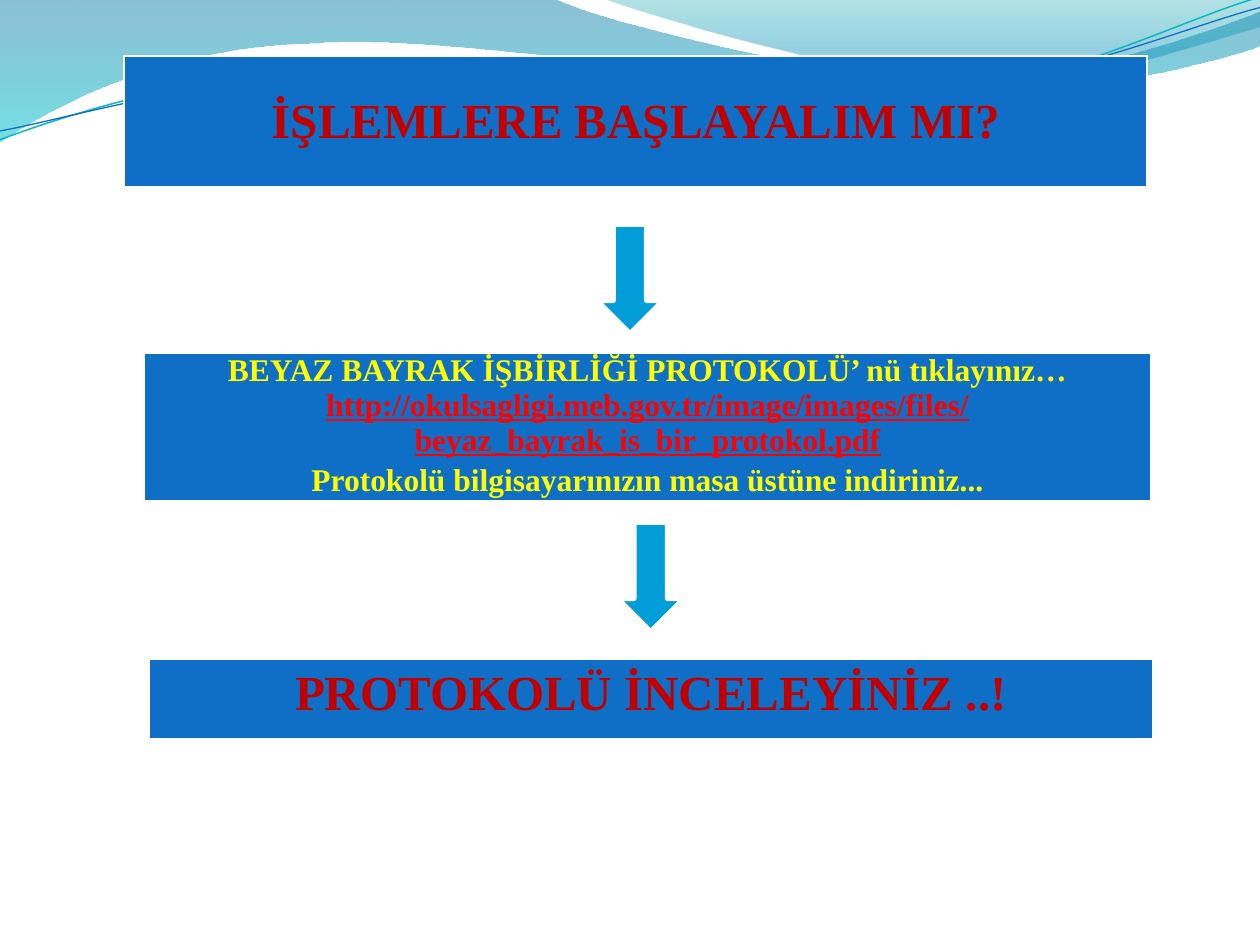
import pptx
import pptx.util
import pptx.dml.color
import pptx.enum.shapes
import pptx.enum.text
import pptx.oxml
import pptx.oxml.ns

COLORS = {
    "panel": "0F6FC6", "arrow": "009DD9", "white": "FFFFFF", "heading": "C00000",
    "note": "FFFF00", "address": "FF0000",
    "wave_top": "0074A1", "wave_bottom": "00C6CF",
    "crest_top": "00A1A9", "crest_bottom": "008BBF",
    "teal_line": "0AB8BF", "blue_line": "0F6FC6",
}
FONT = "Times New Roman"
COLUMNS, ROWS = 100, 75
CELL = pptx.util.Inches(0.1)
STRAND_TILT = 357.3


def grid(*lengths):
    return [round(length * CELL) for length in lengths]


def rgb(name):
    return pptx.dml.color.RGBColor.from_string(COLORS[name])


def xml(markup):
    return pptx.oxml.parse_xml(markup.replace(">", f" {pptx.oxml.ns.nsdecls('a')}>", 1))


def add_curve(shapes, start, pieces, closed):
    builder = shapes.build_freeform(*grid(*start), scale=1.0)
    builder.add_line_segments([grid(*piece[-2:]) for piece in pieces], close=closed)
    shape = builder.convert_to_shape()
    shape.shadow.inherit = False
    segments = list(shape._element.spPr.iter(pptx.oxml.ns.qn("a:lnTo")))
    for segment, piece in zip(segments, pieces):
        if len(piece) == 6:
            values = grid(*piece)
            points = "".join(
                f'<a:pt x="{x - shape.left}" y="{y - shape.top}"/>'
                for x, y in zip(values[::2], values[1::2]))
            bezier = xml(f"<a:cubicBezTo>{points}</a:cubicBezTo>")
            segment.getparent().replace(segment, bezier)
    return shape


def add_wave(page, start, pieces, stops):
    shape = add_curve(page.shapes, start, pieces, True)
    shape.line.fill.background()
    shape.fill.gradient()
    shape.fill.gradient_angle = 270
    for stop, (position, color, alpha) in zip(shape.fill.gradient_stops, stops):
        stop.position = position
        stop.color.rgb = rgb(color)
    colors = shape._element.spPr.iter(pptx.oxml.ns.qn("a:srgbClr"))
    for element, (position, color, alpha) in zip(colors, stops):
        element.append(xml(f'<a:alpha val="{alpha * 1000}"></a:alpha>'))


def add_strand(group, start, pieces, color, width):
    shape = add_curve(group.shapes, start, pieces, False)
    shape.rotation = STRAND_TILT
    shape.fill.background()
    shape.line.color.rgb = rgb(color)
    shape.line.width = pptx.util.Pt(width)


def add_header_waves(page):
    add_wave(page, (0, 0), [
        (44, -0.1), (47.6, 1.7, 66.4, 6.3, 75.8, 6.3), (85.3, 6.3, 95.8, 2.6, 100, 0.9),
        (100.1, 3.6), (98.3, 4.4, 87, 7.6, 74.6, 7.5), (62.2, 7.5, 38.2, 2.8, 25.7, 3.4),
        (12.9, 3.6, 4.6, 8.3, -0.1, 11.3), (0, 0),
    ], [(0, "wave_top", 45), (1, "wave_bottom", 55)])
    add_wave(page, (47.9, -0.1), [
        (50.9, 1.1, 68.2, 6.2, 76.9, 6.5), (85.6, 6.9, 96.1, 3.2, 100, 2.1),
        (100, 0), (47.9, -0.1),
    ], [(0, "crest_top", 30), (0.8, "crest_bottom", 45)])
    group = page.shapes.add_group_shape()
    add_strand(group, (-0.25, 8.75), [
        (4.6, 7.17, 15.8, 4.09, 27.7, 4.15), (39.6, 4.21, 59.2, 9.34, 71.2, 9.01),
        (83.2, 8.68, 94, 3.57, 100.1, 2.16),
    ], "teal_line", 0.85)
    add_strand(group, (-0.2, 8.04), [
        (4.5, 7.46, 16.4, 4.51, 28.3, 4.58), (40.3, 4.64, 59.6, 8.86, 71.6, 8.52),
        (83.6, 8.29, 94.3, 4.18, 100.2, 2.96),
    ], "blue_line", 0.75)


def add_panel(page, box, size, lines, anchor, bottom=0):
    table = page.shapes.add_table(1, 1, *grid(*box)).table
    table.first_row = table.horz_banding = False
    cell = table.cell(0, 0)
    cell.fill.solid()
    cell.fill.fore_color.rgb = rgb("panel")
    cell.vertical_anchor = anchor
    cell.margin_left = cell.margin_right = pptx.util.Inches(0.07)
    cell.margin_top = 0
    cell.margin_bottom = round(bottom * CELL)
    properties = cell._tc.get_or_add_tcPr()
    for index, (side, width) in enumerate(zip("LRTB", (1, 1, 1, 3))):
        properties.insert(index, xml(
            f'<a:ln{side} w="{pptx.util.Pt(width)}"><a:solidFill>'
            f'<a:srgbClr val="{COLORS["white"]}"/></a:solidFill></a:ln{side}>'))
    frame = cell.text_frame
    for index, (text, color, spacing, underline) in enumerate(lines):
        para = frame.add_paragraph() if index else frame.paragraphs[0]
        para.alignment = pptx.enum.text.PP_ALIGN.CENTER
        para.line_spacing = spacing
        span = para.add_run()
        span.text = text
        span.font.name = FONT
        span.font.size = pptx.util.Pt(size)
        span.font.bold = True
        span.font.underline = underline
        span.font.color.rgb = rgb(color)


def add_down_arrow(page, box):
    arrow = page.shapes.add_shape(pptx.enum.shapes.MSO_SHAPE.DOWN_ARROW, *grid(*box))
    arrow.fill.solid()
    arrow.fill.fore_color.rgb = rgb("arrow")
    arrow.line.color.rgb = rgb("white")
    arrow.line.width = pptx.util.Pt(3)
    arrow.shadow.inherit = False


def main():
    deck = pptx.Presentation()
    deck.slide_width, deck.slide_height = grid(COLUMNS, ROWS)
    page = deck.slides.add_slide(deck.slide_layouts[6])
    top = pptx.enum.text.MSO_ANCHOR.TOP
    middle = pptx.enum.text.MSO_ANCHOR.MIDDLE
    add_header_waves(page)
    add_panel(page, (9.85, 4.45, 81.2, 10.5), 28,
              [("İŞLEMLERE BAŞLAYALIM MI?", "heading", 1.15, False)], middle, 0.7)
    add_down_arrow(page, (47.35, 17.8, 5.3, 8.7))
    add_panel(page, (11.45, 28.05, 79.9, 11.8), 18, [
        ("BEYAZ BAYRAK İŞBİRLİĞİ PROTOKOLÜ’ nü tıklayınız…", "note", 1.0, False),
        ("http://okulsagligi.meb.gov.tr/image/images/files/beyaz_bayrak_is_bir_protokol.pdf",
         "address", 1.0, True),
        ("Protokolü bilgisayarınızın masa üstüne indiriniz...", "note", 1.15, False),
    ], top)
    add_down_arrow(page, (49, 41.45, 5.3, 8.7))
    add_panel(page, (11.85, 52.3, 79.6, 6.45), 28,
              [("PROTOKOLÜ İNCELEYİNİZ ..!", "heading", 1.15, False)], top)
    deck.save("out.pptx")


if __name__ == "__main__":
    main()
